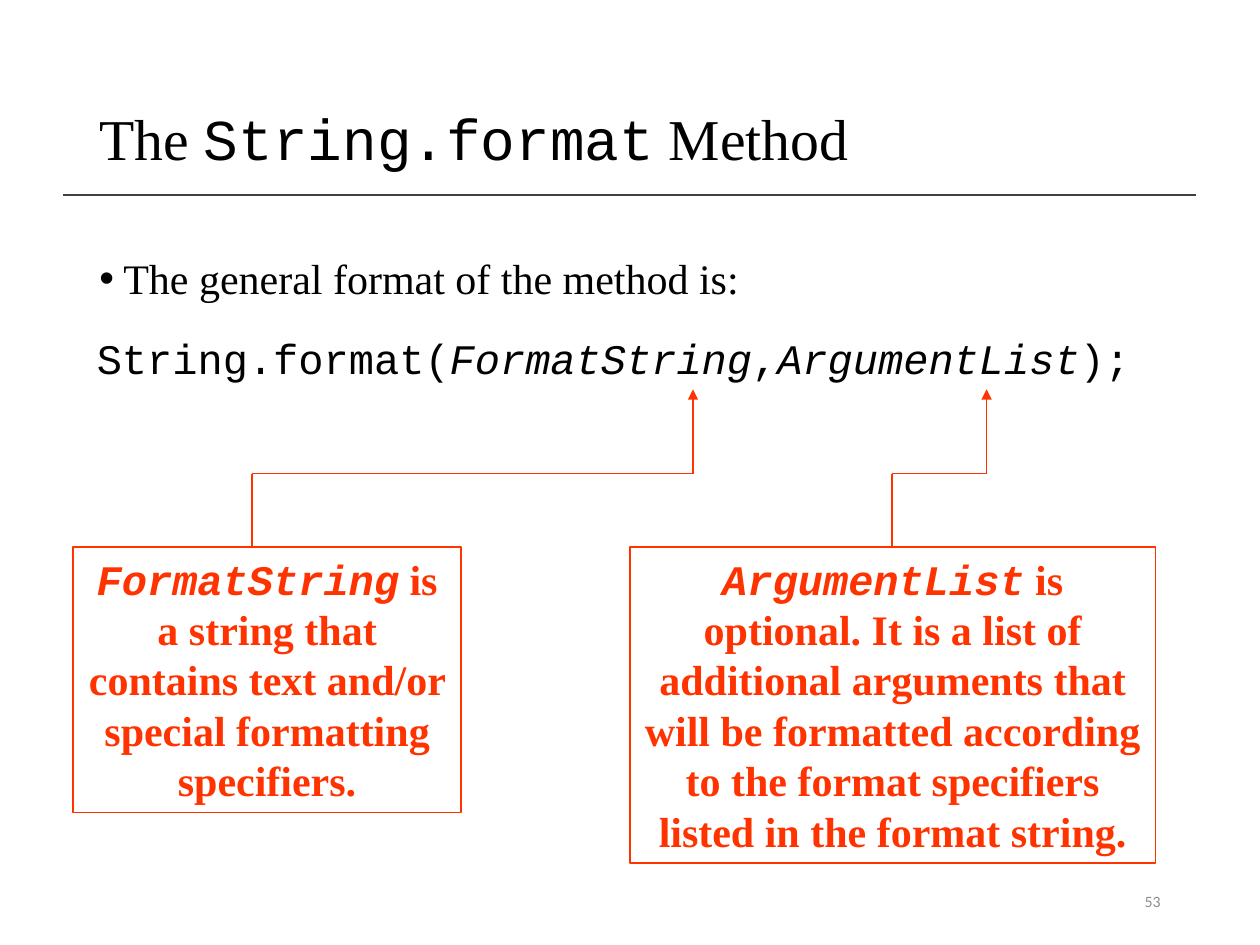
from dataclasses import dataclass

from lxml import etree
from pptx import Presentation
from pptx.dml.color import RGBColor
from pptx.enum.shapes import MSO_CONNECTOR, MSO_SHAPE
from pptx.enum.text import MSO_ANCHOR, MSO_AUTO_SIZE, PP_ALIGN
from pptx.oxml.ns import qn
from pptx.util import Inches, Pt

STRAIGHT = MSO_CONNECTOR.STRAIGHT
RECTANGLE = MSO_SHAPE.RECTANGLE
TOP, MIDDLE = MSO_ANCHOR.TOP, MSO_ANCHOR.MIDDLE
LEFT, CENTER, RIGHT = PP_ALIGN.LEFT, PP_ALIGN.CENTER, PP_ALIGN.RIGHT
NO_AUTOFIT = MSO_AUTO_SIZE.NONE

SERIF, MONO, SANS = "Times New Roman", "Courier New", "Calibri"
BLACK, ORANGE, RULE_GRAY, NUMBER_GRAY = "000000", "FF3300", "404040", "8C8C8C"
CALLOUT_TOP, ELBOW_Y, ARROW_TIP_Y = 4.34, 3.76, 3.09


@dataclass(frozen=True)
class Span:
    text: str
    font: str = SERIF
    italic: bool = False


@dataclass(frozen=True)
class Callout:
    left: float
    width: float
    height: float
    stem_x: float
    target_x: float
    term: str
    explanation: str


CALLOUTS = [
    Callout(0.58, 3.08, 2.11, 2, 5.5, "FormatString",
            " is a string that contains text and/or special formatting specifiers."),
    Callout(5, 4.17, 2.51, 7.08, 7.83, "ArgumentList",
            " is optional. It is a list of additional arguments that will be formatted "
            "according to the format specifiers listed in the format string."),
]


def rgb(value: str) -> RGBColor:
    return RGBColor.from_string(value)


def place(shape, left: float, top: float, width: float, height: float) -> None:
    shape.left, shape.top = Inches(left), Inches(top)
    shape.width, shape.height = Inches(width), Inches(height)


def add_bullet(para, indent: float) -> None:
    properties = para._p.get_or_add_pPr()
    properties.set("marL", str(Inches(indent)))
    properties.set("indent", str(-Inches(indent)))
    etree.SubElement(properties, qn("a:buFont")).set("typeface", "Arial")
    etree.SubElement(properties, qn("a:buChar")).set("char", "•")


def write_text(shape, spans: list[Span], *, size: float = 24, color: str = BLACK,
               bold: bool = False, align=LEFT, anchor=TOP, spacing: float = 1.0,
               bullet_indent: float = 0) -> None:
    frame = shape.text_frame
    frame.word_wrap = True
    frame.auto_size = NO_AUTOFIT
    frame.vertical_anchor = anchor
    para = frame.paragraphs[0]
    if bullet_indent:
        add_bullet(para, bullet_indent)
    para.alignment = align
    para.line_spacing = spacing
    for span in spans:
        run = para.add_run()
        run.text = span.text
        run.font.name = span.font
        run.font.size = Pt(size)
        run.font.bold = bold
        run.font.italic = span.italic
        run.font.color.rgb = rgb(color)


def add_text(page, left: float, top: float, width: float, height: float,
             spans: list[Span], **text_format) -> None:
    box = page.shapes.add_textbox(Inches(left), Inches(top), Inches(width), Inches(height))
    write_text(box, spans, **text_format)


def add_line(page, start: tuple[float, float], end: tuple[float, float], *,
             color: str = ORANGE, weight: float = 0.75, arrow: bool = False) -> None:
    line = page.shapes.add_connector(STRAIGHT, *map(Inches, start + end))
    line.line.color.rgb = rgb(color)
    line.line.width = Pt(weight)
    if arrow:
        etree.SubElement(line.line._get_or_add_ln(), qn("a:tailEnd")).set("type", "triangle")
    etree.SubElement(line._element.spPr, qn("a:effectLst"))


def add_callout(page, callout: Callout) -> None:
    box = page.shapes.add_shape(RECTANGLE, Inches(callout.left), Inches(CALLOUT_TOP),
                                Inches(callout.width), Inches(callout.height))
    box.shadow.inherit = False
    box.fill.background()
    box.line.color.rgb = rgb(ORANGE)
    box.line.width = Pt(0.75)
    write_text(box, [Span(callout.term, MONO, True), Span(callout.explanation)],
               color=ORANGE, bold=True, align=CENTER)
    points = [(callout.stem_x, CALLOUT_TOP), (callout.stem_x, ELBOW_Y),
              (callout.target_x, ELBOW_Y), (callout.target_x, ARROW_TIP_Y)]
    for start, end in zip(points, points[1:]):
        add_line(page, start, end, arrow=end == points[-1])


def main() -> None:
    deck = Presentation()
    deck.slide_width, deck.slide_height = Inches(10), Inches(7.5)
    page = deck.slides.add_slide(deck.slide_layouts[5])
    add_line(page, (0.5, 1.55), (9.49, 1.55), color=RULE_GRAY, weight=1)

    title = page.shapes.title
    place(title, 0.69, 0.4, 8.62, 1.45)
    write_text(title, [Span("The "), Span("String.format", MONO), Span(" Method")],
               size=33, anchor=MIDDLE, spacing=0.9)

    add_text(page, 0.69, 2, 8.62, 4.76, [Span("The general format of the method is:")],
             spacing=0.9, bullet_indent=0.19)
    add_text(page, 0.67, 2.59, 8.5, 0.99, [
        Span("String.format(", MONO),
        Span("FormatString", MONO, True),
        Span(",", MONO),
        Span("ArgumentList", MONO, True),
        Span(");", MONO),
    ])
    for callout in CALLOUTS:
        add_callout(page, callout)
    add_text(page, 7.06, 6.95, 2.25, 0.4, [Span("53", SANS)],
             size=9, color=NUMBER_GRAY, align=RIGHT, anchor=MIDDLE)
    deck.save("out.pptx")


if __name__ == "__main__":
    main()
